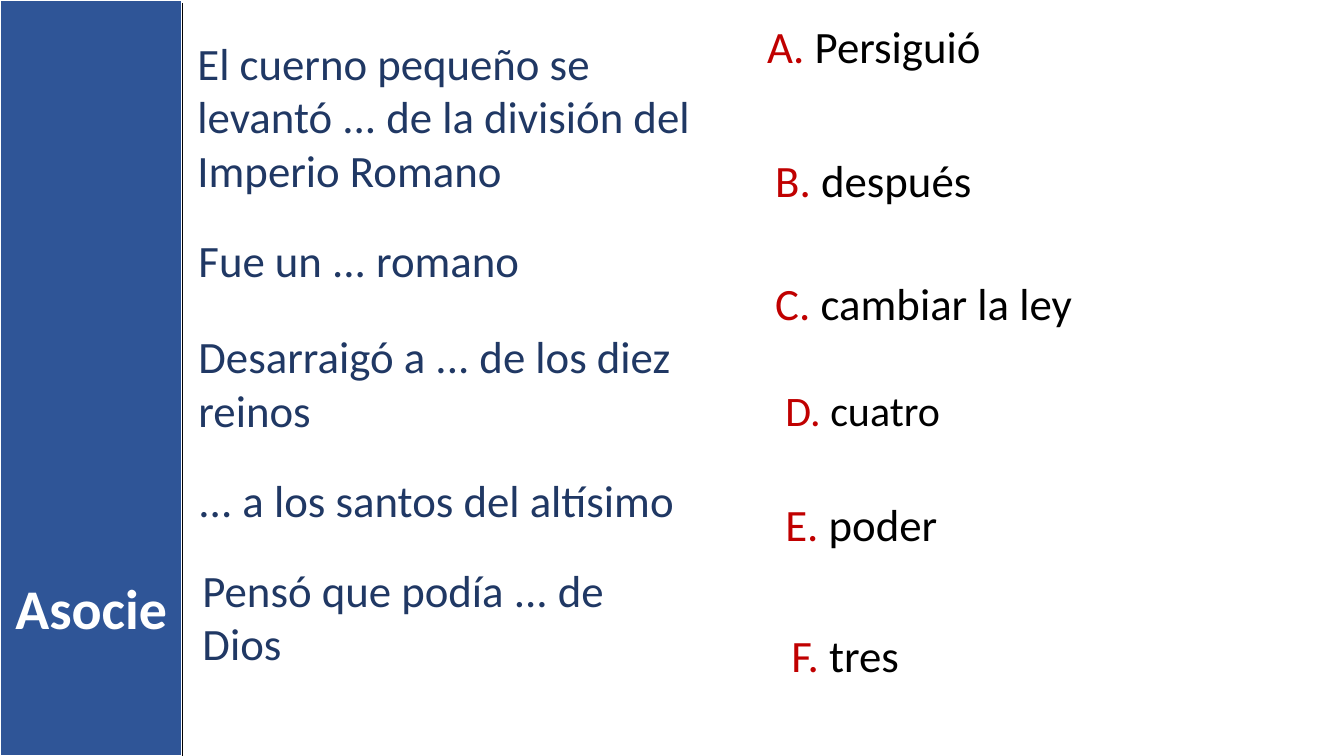
from pptx import Presentation
from pptx.dml.color import RGBColor
from pptx.enum.shapes import MSO_CONNECTOR, MSO_SHAPE
from pptx.enum.text import MSO_ANCHOR, MSO_AUTO_SIZE, PP_ALIGN
from pptx.oxml.ns import qn
from pptx.util import Inches, Pt
from lxml.etree import SubElement

HUES = {"band": "2F5597", "clue": "203864", "mark": "C00000",
        "black": "000000", "white": "FFFFFF"}
CLUES = [
    (0, 0, 5.11, 1.72, "El cuerno pequeño se levantó ... de la división del Imperio Romano"),
    (0.01, 1.96, 4.94, 0.64, "Fue un ... romano"),
    (0.01, 2.91, 5.1, 1.18, "Desarraigó a ... de los diez reinos"),
    (0.01, 4.34, 4.94, 0.64, "... a los santos del altísimo"),
    (0.05, 5.23, 4.77, 1.18, "Pensó que podía ... de Dios"),
]
REPLIES = [
    (0, 0, 5.04, 32, "Persiguió"),
    (0.08, 1.33, 5.29, 32, "después"),
    (0.08, 2.55, 4.88, 32, "cambiar la ley"),
    (0.18, 3.63, 5.29, 30, "cuatro"),
    (0.18, 4.74, 5.53, 32, "poder"),
    (0.24, 6.04, 4.97, 32, "tres"),
]


def color(name):
    return RGBColor.from_string(HUES[name])


def write(shape, runs, size=32, bold=False, align=PP_ALIGN.LEFT):
    frame = shape.text_frame
    frame.word_wrap = True
    frame.auto_size = MSO_AUTO_SIZE.NONE
    frame.vertical_anchor = MSO_ANCHOR.TOP
    para = frame.paragraphs[0]
    para.alignment = align
    for text, hue in runs:
        run = para.add_run()
        run.text = text
        font = run.font
        font.name, font.size, font.bold = "Calibri", Pt(size), bold
        font.color.rgb = color(hue)


def add_box(slide, x, y, w, h):
    return slide.shapes.add_textbox(Inches(x), Inches(y), Inches(w), Inches(h))


def add_band(slide, x, y, w, h):
    shapes = slide.shapes
    band = shapes.add_shape(MSO_SHAPE.RECTANGLE, Inches(x), Inches(y), Inches(w), Inches(h))
    band.shadow.inherit = False
    band.fill.solid()
    band.fill.fore_color.rgb = color("band")
    band.line.color.rgb = color("white")
    band.line.width = Pt(1.5)

    title = shapes.title
    title.left, title.top = Inches(x), Inches(y + 5.64)
    title.width, title.height = Inches(w), Inches(0.77)
    write(title, [("Asocie", "white")], size=40, bold=True, align=PP_ALIGN.CENTER)
    band._element.addnext(title._element)

    edge = shapes.add_connector(MSO_CONNECTOR.STRAIGHT, Inches(x + w), Inches(y + 0.03),
                                Inches(x + w), Inches(y + h))
    edge.line.color.rgb = color("black")
    edge.line.width = Pt(1)
    SubElement(edge._element.spPr, qn("a:effectLst"))


def add_clues(slide, x, y):
    for dx, dy, w, h, text in CLUES:
        write(add_box(slide, x + dx, y + dy, w, h), [(text, "clue")])


def add_replies(slide, x, y):
    for mark, (dx, dy, w, size, text) in zip("ABCDEF", REPLIES):
        box = add_box(slide, x + dx, y + dy, w, size / 50)
        write(box, [(f"{mark}. ", "mark"), (text, "black")], size=size)


def main():
    deck = Presentation()
    deck.slide_width, deck.slide_height = Inches(13.33), Inches(7.5)
    slide = deck.slides.add_slide(deck.slide_layouts[5])
    add_band(slide, 0, 0, 1.81, 7.5)
    add_clues(slide, 1.86, 0.3)
    add_replies(slide, 7.51, 0.14)
    deck.save("out.pptx")


if __name__ == "__main__":
    main()
